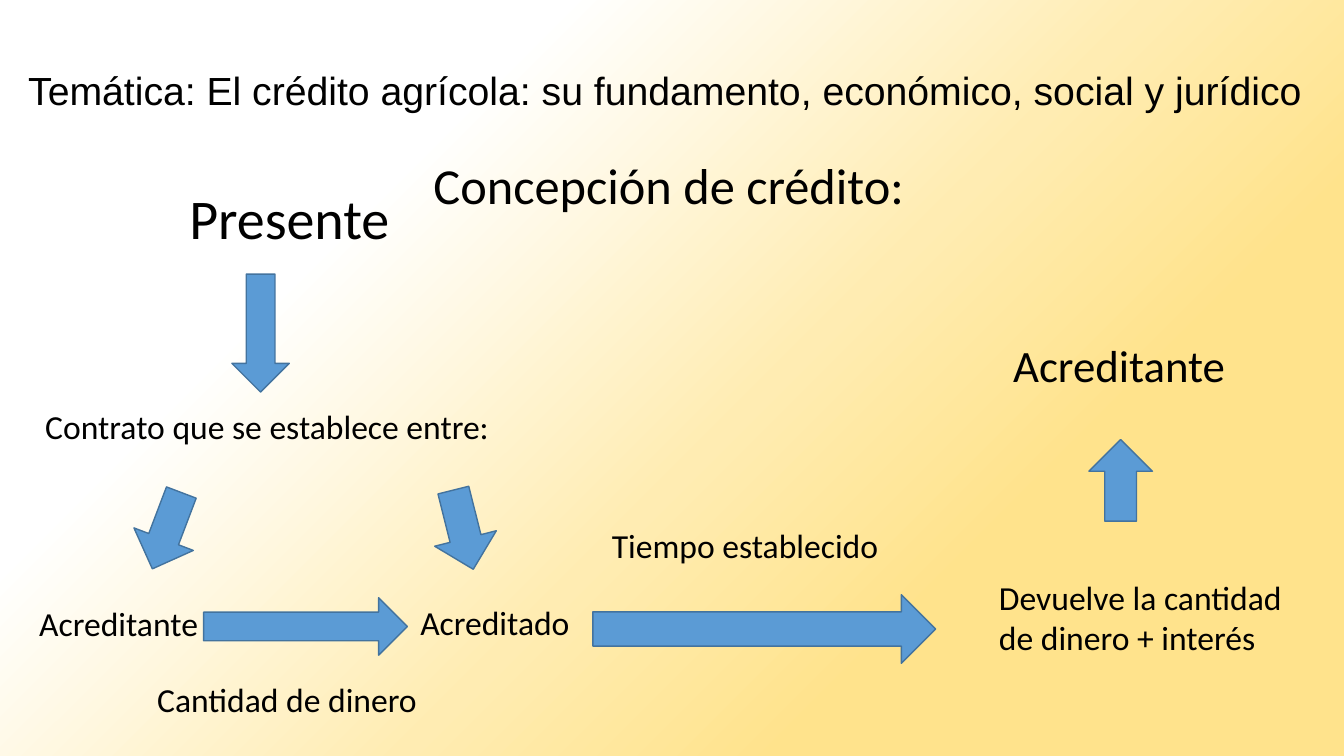
from dataclasses import dataclass

from lxml.etree import SubElement
from pptx import Presentation
from pptx.dml.color import RGBColor
from pptx.enum.shapes import MSO_SHAPE
from pptx.enum.text import MSO_ANCHOR, MSO_AUTO_SIZE, PP_ALIGN
from pptx.oxml.ns import qn
from pptx.slide import Slide
from pptx.text.text import TextFrame
from pptx.util import Inches, Pt

COLOURS = {
    "text": "000000",
    "arrow": "5B9BD5",
    "outline": "43739E",
    "white": "FFFFFF",
    "cream": "FFECB2",
    "yellow": "FFE38C",
}
BACKGROUND_STOPS = [(27, "white"), (55, "cream"), (73, "yellow"), (94, "yellow")]
TITLE = "Temática: El crédito agrícola: su fundamento, económico, social y jurídico"


@dataclass(frozen=True)
class Label:
    text: str
    left: float
    top: float
    width: float
    height: float = 0.5
    size: int = 24
    wrap: bool = False
    align: PP_ALIGN = PP_ALIGN.LEFT


@dataclass(frozen=True)
class Arrow:
    left: float
    top: float
    width: float
    height: float
    kind: MSO_SHAPE = MSO_SHAPE.DOWN_ARROW
    rotation: float = 0


LABELS = [
    Label("Concepción de crédito:", 4.2, 1.48, 5.15, 0.71, 36, wrap=True),
    Label("Presente", 1.07, 1.77, 3.6, 0.77, 40, wrap=True, align=PP_ALIGN.CENTER),
    Label("Contrato que se establece entre:", 0.35, 3.98, 4.65),
    Label("Acreditante", 0.29, 5.93, 1.79),
    Label("Acreditado", 4.07, 5.92, 1.7),
    Label("Cantidad de dinero", 1.46, 6.69, 2.81),
    Label("Tiempo establecido", 5.97, 5.16, 2.87),
    Label("Devuelve la cantidad de dinero + interés", 9.81, 5.67, 3.14, 0.91, wrap=True),
    Label("Acreditante", 9.95, 3.3, 2.33, 0.64, 32),
]
ARROWS = [
    Arrow(2.3, 2.72, 0.57, 1.17),
    Arrow(1.34, 4.86, 0.63, 0.81, rotation=20.8),
    Arrow(4.28, 4.85, 0.63, 0.81, rotation=345.9),
    Arrow(2.02, 5.93, 2.02, 0.57, MSO_SHAPE.RIGHT_ARROW),
    Arrow(5.88, 5.9, 3.4, 0.68, MSO_SHAPE.RIGHT_ARROW),
    Arrow(10.8, 4.36, 0.63, 0.81, rotation=180),
]


def colour(name: str) -> RGBColor:
    return RGBColor.from_string(COLOURS[name])


def paint_background(page: Slide) -> None:
    fill = page.background.fill
    fill.gradient()
    fill.gradient_angle = 315  # counter-clockwise: runs to the lower right
    stops = page.element.find(".//" + qn("a:gsLst"))
    stops.clear()
    for position, name in BACKGROUND_STOPS:
        stop = SubElement(stops, qn("a:gs"), pos=str(position * 1000))
        SubElement(stop, qn("a:srgbClr"), val=COLOURS[name])


def write_text(frame: TextFrame, text: str, font: str, size: int, align: PP_ALIGN) -> None:
    para = frame.paragraphs[0]
    para.alignment = align
    span = para.add_run()
    span.text = text
    for name, value in {"name": font, "size": Pt(size), "bold": False}.items():
        setattr(span.font, name, value)
    span.font.color.rgb = colour("text")


def add_title(page: Slide) -> None:
    title = page.shapes.title
    place = {"left": 0.18, "top": 0.2, "width": 12.91, "height": 1.45}
    for name, value in place.items():
        setattr(title, name, Inches(value))
    frame = title.text_frame
    layout = {
        "word_wrap": True,
        "auto_size": MSO_AUTO_SIZE.NONE,
        "vertical_anchor": MSO_ANCHOR.MIDDLE,
    }
    for name, value in layout.items():
        setattr(frame, name, value)
    write_text(frame, TITLE, "Arial", 28, PP_ALIGN.LEFT)
    frame.paragraphs[0].line_spacing = 0.9


def add_label(page: Slide, label: Label) -> None:
    box = page.shapes.add_textbox(
        Inches(label.left), Inches(label.top), Inches(label.width), Inches(label.height)
    )
    frame = box.text_frame
    frame.word_wrap = label.wrap
    frame.auto_size = MSO_AUTO_SIZE.SHAPE_TO_FIT_TEXT
    write_text(frame, label.text, "Calibri", label.size, label.align)


def add_arrow(page: Slide, arrow: Arrow) -> None:
    shape = page.shapes.add_shape(
        arrow.kind,
        Inches(arrow.left), Inches(arrow.top), Inches(arrow.width), Inches(arrow.height),
    )
    shape.rotation = arrow.rotation
    shape.shadow.inherit = False
    shape.fill.solid()
    shape.fill.fore_color.rgb = colour("arrow")
    shape.line.color.rgb = colour("outline")
    shape.line.width = Pt(1)


def main() -> None:
    deck = Presentation()
    deck.slide_width = Inches(13.33)
    deck.slide_height = Inches(7.5)
    page = deck.slides.add_slide(deck.slide_layouts.get_by_name("Title Only"))
    paint_background(page)
    add_title(page)
    for label in LABELS:
        add_label(page, label)
    for arrow in ARROWS:
        add_arrow(page, arrow)
    deck.save("out.pptx")


if __name__ == "__main__":
    main()
